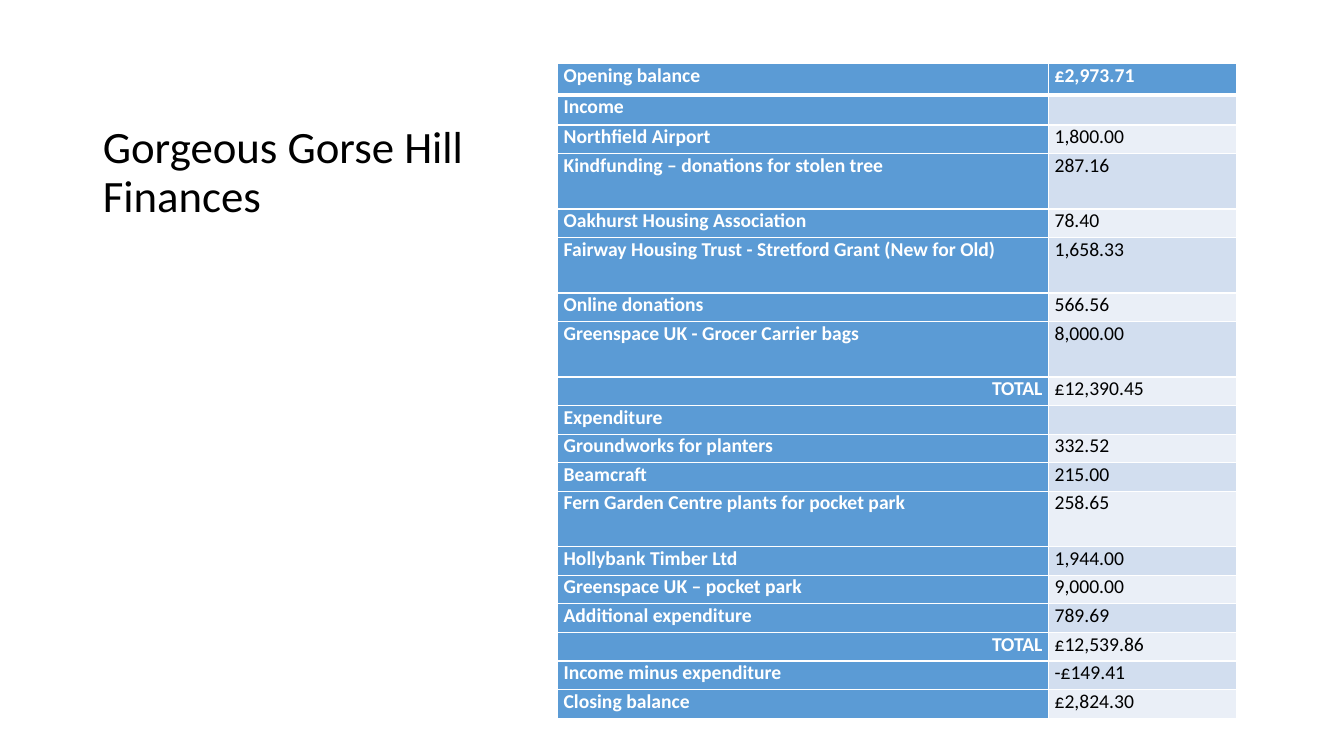
from dataclasses import dataclass

from lxml.etree import SubElement
from pptx import Presentation
from pptx.dml.color import RGBColor as RGB
from pptx.enum.text import MSO_ANCHOR as ANCHOR, MSO_AUTO_SIZE as AUTO, PP_ALIGN as ALIGN
from pptx.oxml.ns import qn
from pptx.util import Inches, Pt


@dataclass(frozen=True)
class Theme:
    font: str = "Calibri"
    title_size: int = 32
    cell_size: int = 14
    white: str = "FFFFFF"
    black: str = "000000"
    blue: str = "5B9BD5"
    band_dark: str = "D2DEEF"
    band_light: str = "EAEFF7"


theme = Theme()


def write(tf, text, size=theme.cell_size, color=theme.black, bold=False, align=ALIGN.LEFT):
    p = tf.paragraphs[0]
    p.alignment = align
    if not text:
        SubElement(p._p, qn("a:endParaRPr"), sz=str(size * 100))
        return p
    r = p.add_run()
    r.text = text
    r.font.name = theme.font
    r.font.size = Pt(size)
    r.font.bold = bold
    r.font.color.rgb = RGB.from_string(color)
    return p


def add_borders(cell, **widths):
    tc_pr = cell._tc.get_or_add_tcPr()
    for side in "LRTB":
        ln = SubElement(tc_pr, qn(f"a:ln{side}"), w=str(Pt(widths.get(side, 1))))
        fill = SubElement(ln, qn("a:solidFill"))
        SubElement(fill, qn("a:srgbClr"), val=theme.white)


prs = Presentation()
prs.slide_width, prs.slide_height = Inches(13.33), Inches(7.5)
s = prs.slides.add_slide(prs.slide_layouts[5])

title = s.shapes.title
title.left, title.top = Inches(0.92), Inches(0.5)
title.width, title.height = Inches(4.3), Inches(1.75)
tf = title.text_frame
tf.word_wrap = True
tf.auto_size = AUTO.NONE
tf.vertical_anchor = ANCHOR.BOTTOM
p = write(tf, "Gorgeous Gorse Hill Finances", size=theme.title_size)
p.line_spacing = 0.9

finances = [
    ("Opening balance", "£2,973.71"),
    ("Income", ""),
    ("Northfield Airport", "1,800.00"),
    ("Kindfunding – donations for stolen tree", "287.16"),
    ("Oakhurst Housing Association", "78.40"),
    ("Fairway Housing Trust - Stretford Grant (New for Old)", "1,658.33"),
    ("Online donations", "566.56"),
    ("Greenspace UK - Grocer Carrier bags", "8,000.00"),
    ("TOTAL", "£12,390.45"),
    ("Expenditure", ""),
    ("Groundworks for planters", "332.52"),
    ("Beamcraft", "215.00"),
    ("Fern Garden Centre plants for pocket park", "258.65"),
    ("Hollybank Timber Ltd", "1,944.00"),
    ("Greenspace UK – pocket park", "9,000.00"),
    ("Additional expenditure", "789.69"),
    ("TOTAL", "£12,539.86"),
    ("Income minus expenditure", "-£149.41"),
    ("Closing balance", "£2,824.30"),
]
table_height = 6.5
heights = {0: 0.31, 1: 0.3, 3: 0.55, 5: 0.55, 7: 0.55, 12: 0.55}
single = (table_height - sum(heights.values())) / (len(finances) - len(heights))

table = s.shapes.add_table(
    len(finances), 2, Inches(5.53), Inches(0.63), Inches(6.74), Inches(table_height)
).table
for column, width in zip(table.columns, (4.87, 1.87)):
    column.width = Inches(width)

for i, row in enumerate(finances):
    table.rows[i].height = Inches(heights.get(i, single))
    for j, text in enumerate(row):
        cell = table.cell(i, j)
        cell.margin_left = cell.margin_right = Inches(0.06)
        cell.margin_top = cell.margin_bottom = 0
        add_borders(cell, T=3 if i == 1 else 1, B=3 if i == 0 else 1)
        heading = i == 0 or j == 0
        band = theme.band_dark if i % 2 else theme.band_light
        cell.fill.solid()
        cell.fill.fore_color.rgb = RGB.from_string(theme.blue if heading else band)
        write(
            cell.text_frame,
            text,
            color=theme.white if heading else theme.black,
            bold=heading,
            align=ALIGN.RIGHT if text == "TOTAL" else ALIGN.LEFT,
        )

prs.save("out.pptx")
